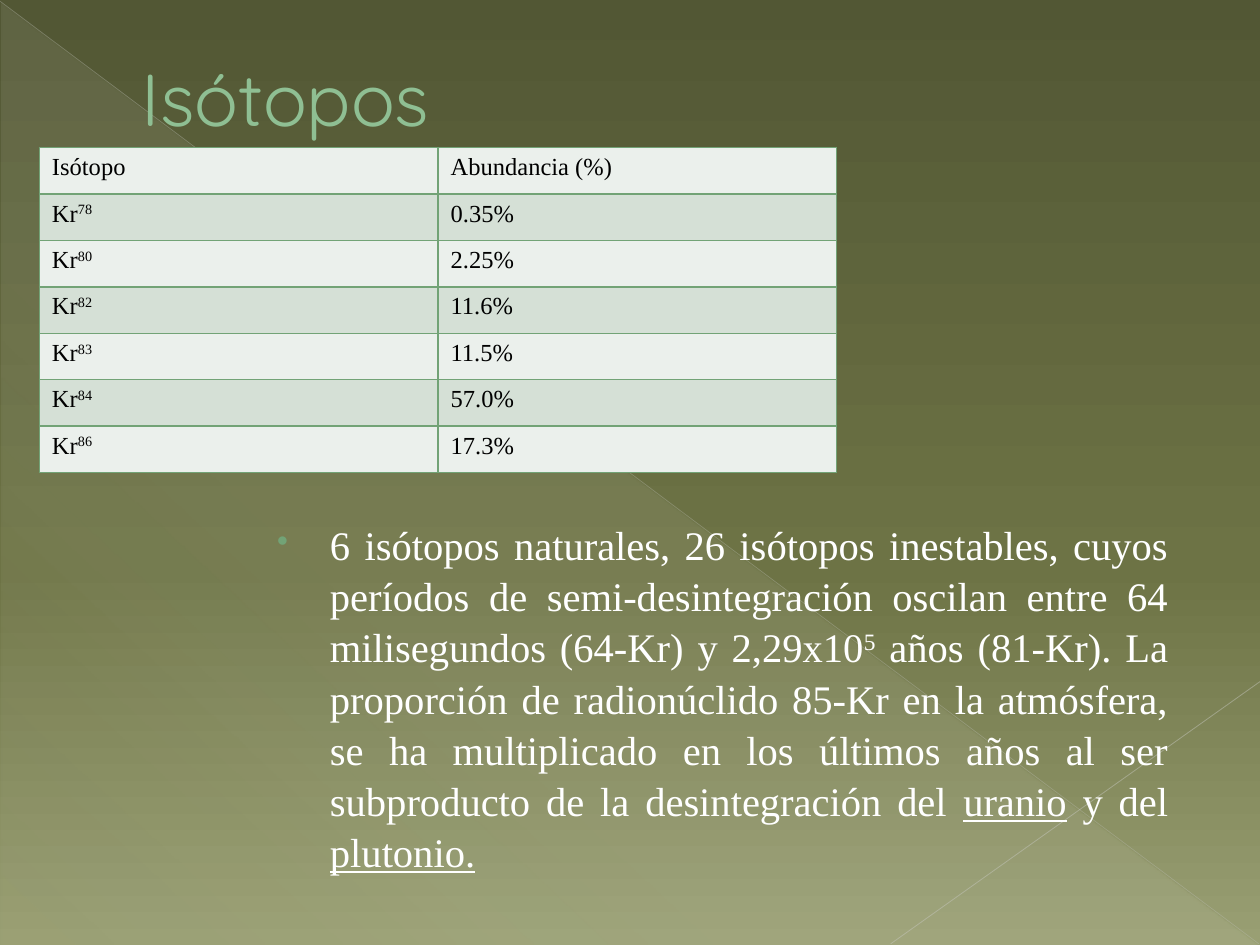
from dataclasses import dataclass

from pptx import Presentation
from pptx.dml.color import RGBColor
from pptx.enum.shapes import MSO_CONNECTOR, MSO_SHAPE
from pptx.enum.text import MSO_ANCHOR, PP_ALIGN
from pptx.oxml import parse_xml
from pptx.oxml.ns import nsdecls, qn
from pptx.util import Pt


@dataclass(frozen=True)
class Theme:
    """Colours, fonts and type sizes of the slide."""
    sky: tuple = (("525734", 0, 100), ("6D7345", 60, 100), ("999F73", 100, 100))
    glow: tuple = (("EAEBDE", 0, 10), ("EAEBDE", 70, 8), ("EAEBDE", 100, 1))
    title: str = "8FBF93"
    edge: str = "4F7152"
    accent: str = "72A376"
    body: str = "FFFFFF"
    ink: str = "000000"
    rays: tuple = ("C1C3B9", "C8C9C1")
    bands: tuple = ("EBF0EC", "D5E0D6")
    head: str = "Quicksand"
    serif: str = "Times New Roman"
    big: float = 42
    mid: float = 23.2
    small: float = 14


def color(code):
    """Turn a hex code into a colour."""
    return RGBColor.from_string(code)


def solid(code, alpha=100):
    """Return the XML of a solid fill."""
    return (f'<a:solidFill {nsdecls("a")}><a:srgbClr val="{code}">'
            f'<a:alpha val="{alpha * 1000}"/></a:srgbClr></a:solidFill>')


def blend(fill, stops, angle):
    """Replace a solid fill element with a linear gradient."""
    marks = "".join(
        f'<a:gs pos="{pos * 1000}"><a:srgbClr val="{code}">'
        f'<a:alpha val="{alpha * 1000}"/></a:srgbClr></a:gs>'
        for code, pos, alpha in stops)
    grad = parse_xml(f'<a:gradFill {nsdecls("a")} rotWithShape="1"><a:gsLst>{marks}</a:gsLst>'
                     f'<a:lin ang="{angle * 60000}" scaled="0"/></a:gradFill>')
    fill.getparent().replace(fill, grad)


class Deck:
    """Holds the theme and the current slide."""

    def __init__(self, theme):
        """Open a deck with one blank slide."""
        self.theme = theme
        self.deck = Presentation()
        self.deck.slide_width, self.deck.slide_height = Pt(720), Pt(540)
        self.slide = self.deck.slides.add_slide(self.deck.slide_layouts[6])

    def ground(self):
        """Paint the background gradient."""
        self.slide.background.fill.solid()
        blend(next(self.slide.element.iter(qn("a:solidFill"))), self.theme.sky, 90)

    def wedge(self, box):
        """Add the pale triangle."""
        shape = self.slide.shapes.add_shape(MSO_SHAPE.RIGHT_TRIANGLE, *map(Pt, box))
        shape.shadow.inherit = False
        shape.line.fill.background()
        shape.fill.solid()
        blend(shape.element.spPr.find(qn("a:solidFill")), self.theme.glow, 133)

    def line(self, ends, code, width, alpha):
        """Add a thin translucent line."""
        line = self.slide.shapes.add_connector(MSO_CONNECTOR.STRAIGHT, *map(Pt, ends))
        line.line.width = Pt(width)
        line.line.color.rgb = color(code)
        props = line.element.spPr
        fill = next(props.iter(qn("a:solidFill")))
        fill.getparent().replace(fill, parse_xml(solid(code, alpha)))
        props.append(parse_xml(f'<a:effectLst {nsdecls("a")}/>'))

    def fill(self, para, parts, font, size, code):
        """Fill a paragraph with plain, raised ("up") or underlined ("under") runs."""
        for text, kind in parts:
            run = para.add_run()
            run.text = text
            run.font.name, run.font.size = font, Pt(size)
            run.font.color.rgb = color(code)
            if kind == "up":
                run._r.get_or_add_rPr().set("baseline", "30000")
            elif kind == "under":
                run.font.underline = True

    def frame(self, box):
        """Add a wrapping text box and return its text frame."""
        frame = self.slide.shapes.add_textbox(*map(Pt, box)).text_frame
        frame.word_wrap = True
        return frame

    def title(self, text, box):
        """Add the outlined heading."""
        look = self.theme
        frame = self.frame(box)
        frame.vertical_anchor = MSO_ANCHOR.MIDDLE
        para = frame.paragraphs[0]
        para._p.get_or_add_pPr().set("marL", str(Pt(38)))
        self.fill(para, [(text, "")], look.head, look.big, look.title)
        para.runs[0]._r.get_or_add_rPr().insert(0, parse_xml(
            f'<a:ln {nsdecls("a")} w="{Pt(0.5)}">{solid(look.edge)}</a:ln>'))

    def bullet(self, parts, box):
        """Add the justified bullet paragraph."""
        look = self.theme
        para = self.frame(box).paragraphs[0]
        para.alignment = PP_ALIGN.JUSTIFY
        para.line_spacing, para.space_before = 1.05, Pt(3)
        props = para._p.get_or_add_pPr()
        props.set("marL", str(Pt(35.3)))
        props.set("indent", str(Pt(-30.2)))
        for item in (f'<a:buClr {nsdecls("a")}><a:srgbClr val="{look.accent}"/></a:buClr>',
                     f'<a:buSzPct {nsdecls("a")} val="80000"/>',
                     f'<a:buChar {nsdecls("a")} char="•"/>'):
            props.append(parse_xml(item))
        self.fill(para, parts, look.serif, look.mid, look.body)

    def table(self, rows, box):
        """Add the banded table with thin borders."""
        look = self.theme
        grid = self.slide.shapes.add_table(len(rows), len(rows[0]), *map(Pt, box)).table
        for i, row in enumerate(rows):
            for j, parts in enumerate(row):
                cell = grid.cell(i, j)
                props = cell._tc.get_or_add_tcPr()
                for side in ("lnL", "lnR", "lnT", "lnB"):
                    props.append(parse_xml(f'<a:{side} {nsdecls("a")} w="{Pt(1)}">'
                                           f'{solid(look.accent)}</a:{side}>'))
                cell.fill.solid()
                cell.fill.fore_color.rgb = color(look.bands[i % 2])
                self.fill(cell.text_frame.paragraphs[0], parts,
                          look.serif, look.small, look.ink)


def main():
    """Build and save the slide."""
    theme = Theme()
    deck = Deck(theme)
    deck.ground()
    deck.wedge((0.7, 1.4, 718.6, 538.6))
    deck.line((0, 0.7, 719.3, 539.3), theme.rays[0], 0.39, 35)
    deck.line((720, 389.5, 509, 539.3), theme.rays[1], 0.47, 45)
    deck.title("Isótopos", (36, 20.9, 648, 69.1))
    deck.bullet([
        ("6 isótopos naturales, 26 isótopos inestables, cuyos períodos de "
         "semi-desintegración oscilan entre 64 milisegundos (64-Kr) y 2,29x10", ""),
        ("5", "up"),
        (" años (81-Kr). La proporción de radionúclido 85-Kr en la atmósfera, se ha "
         "multiplicado en los últimos años al ser subproducto de la desintegración del ", ""),
        ("uranio", "under"), (" y del ", ""), ("plutonio.", "under"),
    ], (146.2, 292.3, 528.5, 196.6))
    shares = {"78": "0.35%", "80": "2.25%", "82": "11.6%",
              "83": "11.5%", "84": "57.0%", "86": "17.3%"}
    rows = [([("Isótopo", "")], [("Abundancia (%)", "")])]
    rows += [([("Kr", ""), (mass, "up")], [(share, "")]) for mass, share in shares.items()]
    deck.table(rows, (22.5, 84.3, 455.6, 185.8))
    deck.deck.save("out.pptx")


if __name__ == "__main__":
    main()
